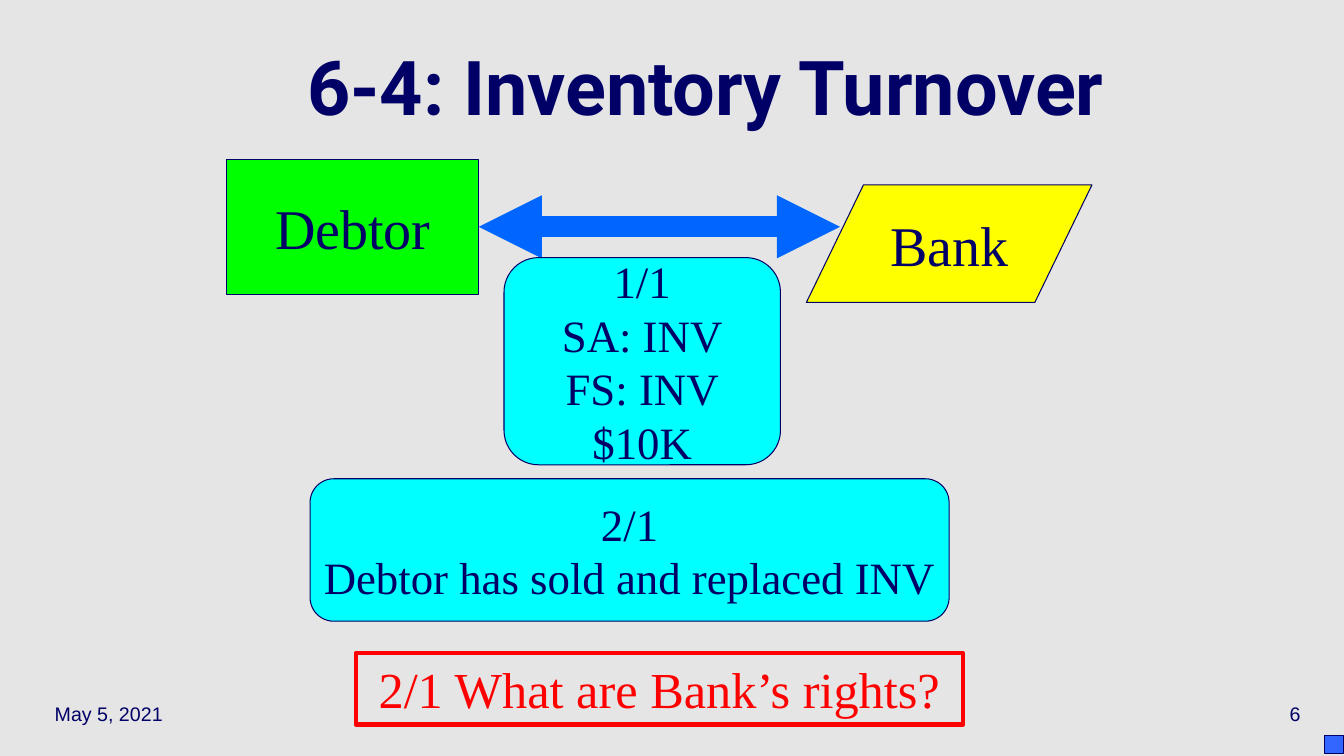
import pptx
import pptx.util
import pptx.dml.color
import pptx.enum.shapes
import pptx.enum.text
import pptx.oxml
import pptx.oxml.ns
import lxml.etree

Pt = pptx.util.Pt
Shapes = pptx.enum.shapes.MSO_SHAPE
Align = pptx.enum.text.PP_ALIGN
Anchor = pptx.enum.text.MSO_ANCHOR

NAVY, RED, BLUE, CYAN = "000066", "FF0000", "0066FF", "00FFFF"
BACKGROUND = "E5E5E5"
SERIF = "Times New Roman"

LABELS = [
    ("May 5, 2021", (32, 492, 200, 36), Align.LEFT, "Arial", 14, False, None),
    ("6", (736, 492, 200, 36), Align.RIGHT, "Arial", 14, False, None),
    ("6‑4: Inventory Turnover", (64, 24, 880, 90), Align.CENTER, "Roboto", 54, True, 0.7),
]

BANK = (Shapes.FLOWCHART_DATA, (576, 132, 204, 84), "FFFF00", ["Bank"], 40)
DEBTOR = (Shapes.FLOWCHART_PROCESS, (162, 114, 180, 96), "00FF00", ["Debtor"], 40)
EVENTS = [
    (Shapes.FLOWCHART_ALTERNATE_PROCESS, (360, 184, 197.5, 148), CYAN,
     ["1/1", "SA: INV", "FS: INV", "$10K"], 32),
    (Shapes.FLOWCHART_ALTERNATE_PROCESS, (221.5, 342, 456.5, 101.75), CYAN,
     ["2/1", "Debtor has sold and replaced INV"], 32),
]
QUESTION = (Shapes.RECTANGLE, (254, 466.5, 434, 51), None,
            ["2/1 What are Bank’s rights?"], 36, RED, 3)
CORNER = (Shapes.RECTANGLE, (946, 525.5, 14, 12.5), "3366FF", [], 14)
ARROW = (342, 162, 600, 162)

presentation = pptx.Presentation()
presentation.slide_width, presentation.slide_height = Pt(960), Pt(540)
slide = presentation.slides.add_slide(presentation.slide_layouts[6])


def points(values):
    return [Pt(value) for value in values]


def paint(color_format, color):
    color_format.rgb = pptx.dml.color.RGBColor.from_string(color)


def fill_solid(fill, color):
    fill.solid()
    paint(fill.fore_color, color)


def write(frame, lines, font, size, color, align, bold=False, spacing=None):
    frame.vertical_anchor = Anchor.MIDDLE
    for index, line in enumerate(lines):
        paragraph = frame.add_paragraph() if index else frame.paragraphs[0]
        paragraph.alignment = align
        if spacing:
            paragraph.line_spacing = spacing
        run = paragraph.add_run()
        run.text = line
        run.font.name, run.font.size, run.font.bold = font, Pt(size), bold
        paint(run.font.color, color)


def add_label(text, box, align, font, size, bold, spacing):
    frame = slide.shapes.add_textbox(*points(box)).text_frame
    frame.word_wrap = True
    write(frame, [text], font, size, NAVY, align, bold, spacing)


def add_box(preset, box, fill, lines, size, color=NAVY, line_width=0.75):
    shape = slide.shapes.add_shape(preset, *points(box))
    shape.shadow.inherit = False
    if fill:
        fill_solid(shape.fill, fill)
    else:
        shape.fill.background()
    fill_solid(shape.line.fill, color)
    shape.line.width = Pt(line_width)
    shape.text_frame.word_wrap = False
    write(shape.text_frame, lines, SERIF, size, color, Align.CENTER)
    return shape


def add_double_arrow(ends, start_shape):
    connector = slide.shapes.add_connector(
        pptx.enum.shapes.MSO_CONNECTOR.STRAIGHT, *points(ends))
    connector.begin_connect(start_shape, 3)
    fill_solid(connector.line.fill, BLUE)
    connector.line.width = Pt(15)
    line = connector.line._get_or_add_ln()
    for end in ("a:headEnd", "a:tailEnd"):
        lxml.etree.SubElement(line, pptx.oxml.ns.qn(end), type="triangle")
    lxml.etree.SubElement(connector._element.spPr, pptx.oxml.ns.qn("a:effectLst"))


fill_solid(slide.background.fill, BACKGROUND)
for label in LABELS:
    add_label(*label)
add_box(*BANK)
debtor = add_box(*DEBTOR)
add_double_arrow(ARROW, debtor)
for box in EVENTS + [QUESTION, CORNER]:
    add_box(*box)

presentation.save("out.pptx")
